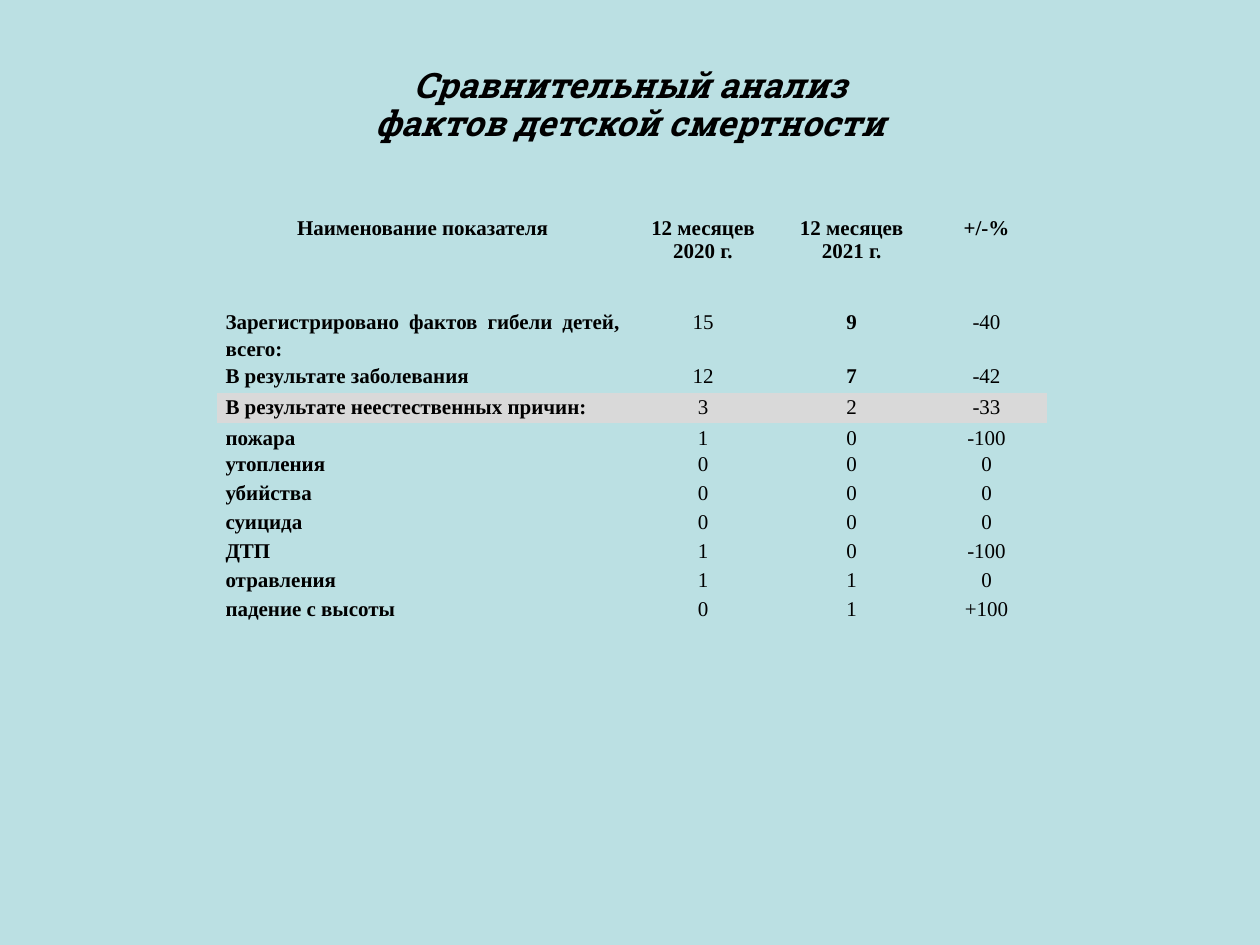
from dataclasses import dataclass

from pptx import Presentation
from pptx import util as u
from pptx.dml.color import RGBColor
from pptx.enum import text
from pptx.oxml.ns import qn


@dataclass(frozen=True)
class Theme:
    background: RGBColor = RGBColor(0xBB, 0xE0, 0xE3)
    highlight: RGBColor = RGBColor(0xD9, 0xD9, 0xD9)
    ink: RGBColor = RGBColor(0, 0, 0)
    title_font: str = "Roboto Slab"
    table_font: str = "Times New Roman"
    title_size: int = 20
    table_size: int = 12


@dataclass(frozen=True)
class Indicator:
    name: str
    year_2020: str
    year_2021: str
    change: str
    height: float = 0.23
    top_margin: float = 0
    bold_2021: bool = False
    highlighted: bool = False


THEME = Theme()
NO_STYLE_NO_GRID = "{2D5ABB26-0587-4C30-8999-92F81FD0307C}"
CENTER = text.PP_ALIGN.CENTER
JUSTIFY = text.PP_ALIGN.JUSTIFY
COLUMN_WIDTHS = (3.27, 1.18, 1.18, 0.96)
HEADER_HEIGHT = 0.37
HEADERS = (
    "Наименование показателя",
    "12 месяцев\n2020 г.",
    "12 месяцев\n2021 г.",
    "+/-%",
)
INDICATORS = (
    Indicator("Зарегистрировано фактов гибели детей, всего:", "15", "9", "-40",
              height=0.75, top_margin=0.35, bold_2021=True),
    Indicator("В результате заболевания", "12", "7", "-42", height=0.25, bold_2021=True),
    Indicator("В результате неестественных причин:", "3", "2", "-33",
              height=0.24, highlighted=True),
    Indicator("пожара", "1", "0", "-100", height=0.21),
    Indicator("утопления", "0", "0", "0"),
    Indicator("убийства", "0", "0", "0"),
    Indicator("суицида", "0", "0", "0"),
    Indicator("ДТП", "1", "0", "-100"),
    Indicator("отравления", "1", "1", "0"),
    Indicator("падение с высоты", "0", "1", "+100"),
)


def write_text(frame, content: str, *, font: str = THEME.table_font,
               size: int = THEME.table_size, bold: bool = False, italic: bool = False,
               align=CENTER, line_spacing: float = 1.0, space_after: int = 0) -> None:
    frame.text = content
    for paragraph in frame.paragraphs:
        paragraph.alignment = align
        paragraph.line_spacing = line_spacing
        paragraph.space_after = u.Pt(space_after)
        for run in paragraph.runs:
            run.font.name = font
            run.font.size = u.Pt(size)
            run.font.bold = bold
            run.font.italic = italic
            run.font.color.rgb = THEME.ink


def format_cell(cell, *, top_margin: float = 0, highlighted: bool = False) -> None:
    cell.margin_left = cell.margin_right = u.Inches(0.07)
    cell.margin_top = u.Inches(top_margin)
    cell.margin_bottom = 0
    if highlighted:
        cell.fill.solid()
        cell.fill.fore_color.rgb = THEME.highlight
    else:
        cell.fill.background()


def add_title(slide) -> None:
    title = slide.shapes.title
    title.left, title.top = u.Inches(0.5), u.Inches(0.46)
    title.width, title.height = u.Inches(9), u.Inches(0.87)
    frame = title.text_frame
    frame.vertical_anchor = text.MSO_ANCHOR.MIDDLE
    frame.margin_bottom = u.Inches(0.15)
    write_text(frame, "Сравнительный анализ\vфактов детской смертности",
               font=THEME.title_font, size=THEME.title_size, bold=True, italic=True,
               line_spacing=0.9)


def add_indicator_table(slide) -> None:
    heights = [HEADER_HEIGHT] + [indicator.height for indicator in INDICATORS]
    table = slide.shapes.add_table(
        len(heights), len(COLUMN_WIDTHS), u.Inches(1.72), u.Inches(1.72),
        u.Inches(sum(COLUMN_WIDTHS)), u.Inches(sum(heights))).table
    table.first_row = table.horz_banding = False
    table._tbl.tblPr.find(qn("a:tableStyleId")).text = NO_STYLE_NO_GRID
    for column, width in zip(table.columns, COLUMN_WIDTHS):
        column.width = u.Inches(width)
    for row, height in zip(table.rows, heights):
        row.height = u.Inches(height)

    for column, header in enumerate(HEADERS):
        cell = table.cell(0, column)
        format_cell(cell)
        write_text(cell.text_frame, header, bold=True)

    for row, indicator in enumerate(INDICATORS, start=1):
        values = (
            (indicator.name, True, JUSTIFY),
            (indicator.year_2020, False, CENTER),
            (indicator.year_2021, indicator.bold_2021, CENTER),
            (indicator.change, False, CENTER),
        )
        for column, (value, bold, align) in enumerate(values):
            cell = table.cell(row, column)
            format_cell(cell, top_margin=indicator.top_margin,
                        highlighted=indicator.highlighted)
            write_text(cell.text_frame, value, bold=bold, align=align,
                       line_spacing=1.15, space_after=10)


def main() -> None:
    presentation = Presentation()
    presentation.slide_width, presentation.slide_height = u.Inches(10), u.Inches(7.5)
    slide = presentation.slides.add_slide(presentation.slide_layouts[5])
    slide.background.fill.solid()
    slide.background.fill.fore_color.rgb = THEME.background
    add_title(slide)
    add_indicator_table(slide)
    presentation.save("out.pptx")


if __name__ == "__main__":
    main()
